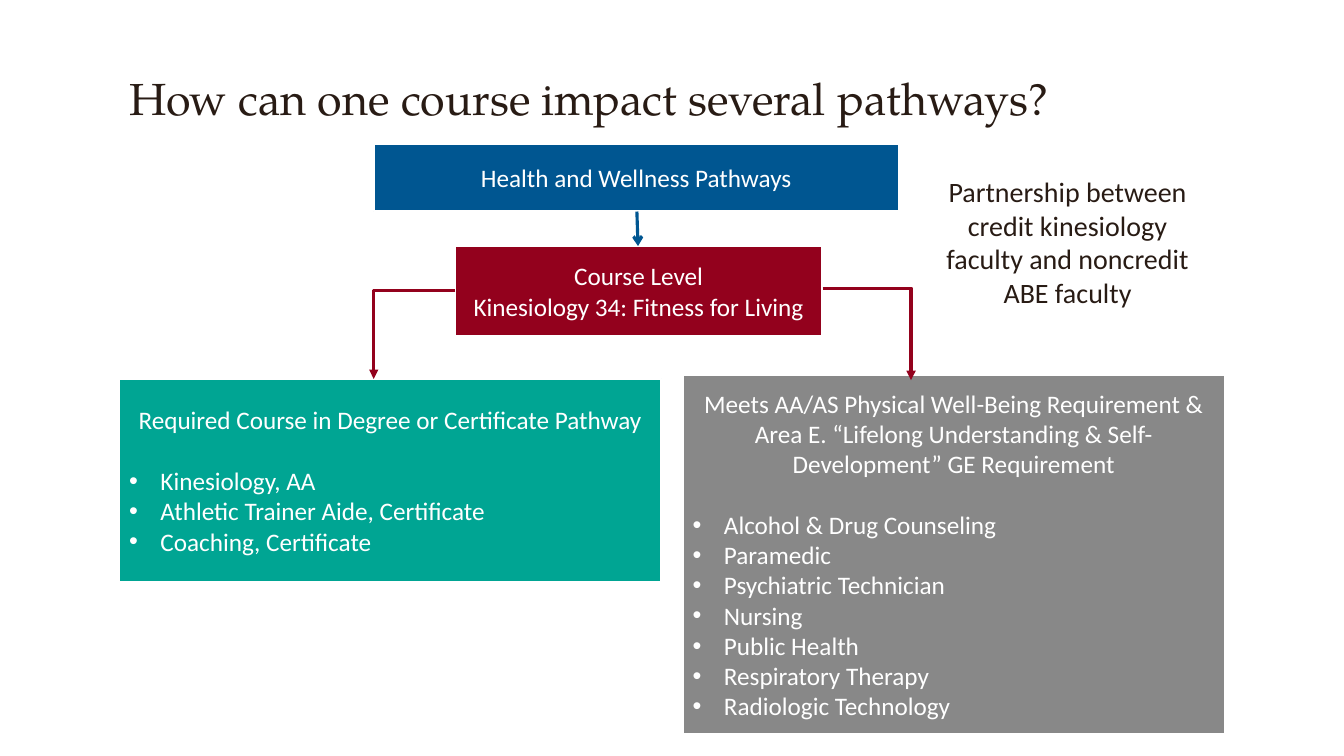
import dataclasses
import typing

import lxml.etree
import pptx
import pptx.dml.color
import pptx.enum.shapes
import pptx.enum.text
import pptx.oxml.ns
import pptx.util

Cm = pptx.util.Cm
Pt = pptx.util.Pt
qn = pptx.oxml.ns.qn
ALIGN = pptx.enum.text.PP_ALIGN
ANCHOR = pptx.enum.text.MSO_ANCHOR
CONNECTOR = pptx.enum.shapes.MSO_CONNECTOR

BODY_FONT = "Calibri"
TITLE_FONT = "TeX Gyre Pagella"
INK, WHITE = "281B14", "FFFFFF"
BLUE, RED, GREEN, GREY = "005691", "93011D", "00A593", "888888"
LIST_INDENT = Cm(0.79)


@dataclasses.dataclass(frozen=True)
class Frame:
    """Left, top, width and height in centimetres."""
    left: float
    top: float
    width: float
    height: float

    def lengths(self) -> list[int]:
        return [Cm(value) for value in dataclasses.astuple(self)]


@dataclasses.dataclass(frozen=True)
class Card:
    frame: Frame
    fill: str
    headings: tuple[str, ...]
    items: tuple[str, ...] = ()


@dataclasses.dataclass(frozen=True)
class Arrow:
    start: tuple[float, float]
    end: tuple[float, float]
    color: str
    head: str
    bent: bool = False


STEP_CARDS = (
    Card(Frame(11.46, 6.2, 9.27, 2.26), RED,
         ("Course Level", "Kinesiology 34: Fitness for Living")),
    Card(Frame(9.42, 3.63, 13.23, 1.7), BLUE, ("Health and Wellness Pathways",)),
)
LIST_CARDS = (
    Card(Frame(3, 9.55, 13.67, 5.11), GREEN,
         ("Required Course in Degree or Certificate Pathway",),
         ("Kinesiology, AA", "Athletic Trainer Aide, Certificate",
          "Coaching, Certificate")),
    Card(Frame(17.2, 9.45, 13.67, 9.04), GREY,
         ("Meets AA/AS Physical Well-Being Requirement & Area E. "
          "“Lifelong Understanding & Self-Development” GE Requirement",),
         ("Alcohol & Drug Counseling", "Paramedic", "Psychiatric Technician",
          "Nursing", "Public Health", "Respiratory Therapy",
          "Radiologic Technology")),
)
ARROWS = (
    Arrow((16.05, 5.33), (16.08, 6.2), BLUE, "arrow"),
    Arrow((11.48, 7.32), (9.42, 9.55), RED, "triangle", bent=True),
    Arrow((20.73, 7.26), (22.96, 9.58), RED, "triangle", bent=True),
)


def rgb(code: str) -> pptx.dml.color.RGBColor:
    return pptx.dml.color.RGBColor.from_string(code)


def place(shape: typing.Any, frame: Frame) -> None:
    shape.left, shape.top, shape.width, shape.height = frame.lengths()


def format_spans(para: typing.Any, font: str, size: float, color: str) -> None:
    for span in para.runs:
        span.font.name = font
        span.font.size = Pt(size)
        span.font.color.rgb = rgb(color)


def set_bullet(para: typing.Any, shown: bool) -> None:
    properties = para._p.get_or_add_pPr()
    indent = LIST_INDENT if shown else 0
    properties.set("marL", str(indent))
    properties.set("indent", str(-indent))
    if shown:
        lxml.etree.SubElement(properties, qn("a:buFont")).set("typeface", "Arial")
        lxml.etree.SubElement(properties, qn("a:buChar")).set("char", "•")
    else:
        lxml.etree.SubElement(properties, qn("a:buNone"))


def fill_card(shape: typing.Any, card: Card) -> None:
    """Colour a shape and write its centred headings and bulleted items."""
    place(shape, card.frame)
    shape.fill.solid()
    shape.fill.fore_color.rgb = rgb(card.fill)
    shape.line.color.rgb = rgb(WHITE)
    shape.line.width = Pt(1.5)
    box = shape.text_frame
    box.text = "\n".join(card.headings + card.items)
    box.word_wrap = True
    box.auto_size = pptx.enum.text.MSO_AUTO_SIZE.NONE
    box.vertical_anchor = ANCHOR.MIDDLE
    first_item = len(card.headings)
    for index, para in enumerate(box.paragraphs):
        listed = index >= first_item
        set_bullet(para, listed)
        para.alignment = ALIGN.LEFT if listed else ALIGN.CENTER
        para.space_before = Pt(22 if index == first_item else 0)
        format_spans(para, BODY_FONT, 18, WHITE)


def add_arrow(page: typing.Any, arrow: Arrow) -> None:
    kind = CONNECTOR.ELBOW if arrow.bent else CONNECTOR.STRAIGHT
    ends = [Cm(value) for value in arrow.start + arrow.end]
    connector = page.shapes.add_connector(kind, *ends)
    connector.line.color.rgb = rgb(arrow.color)
    connector.line.width = Pt(2.25)
    properties = connector.element.spPr
    if arrow.bent:
        properties.find(qn("a:prstGeom")).set("prst", "bentConnector2")
    line = properties.find(qn("a:ln"))
    lxml.etree.SubElement(line, qn("a:tailEnd")).set("type", arrow.head)
    lxml.etree.SubElement(properties, qn("a:effectLst"))


def write_title(title: typing.Any) -> None:
    place(title, Frame(3, 1.02, 27.94, 2.26))
    box = title.text_frame
    box.text = "How can one course impact several pathways?"
    box.auto_size = pptx.enum.text.MSO_AUTO_SIZE.NONE
    box.vertical_anchor = ANCHOR.BOTTOM
    para = box.paragraphs[0]
    para.alignment = ALIGN.LEFT
    para.line_spacing = 0.9
    format_spans(para, TITLE_FONT, 32, INK)


def add_partnership_note(page: typing.Any) -> None:
    note = page.shapes.add_textbox(*Frame(23.44, 4.27, 6.93, 3.68).lengths())
    box = note.text_frame
    box.word_wrap = True
    box.text = ("Partnership between credit kinesiology faculty "
                "and noncredit ABE faculty")
    para = box.paragraphs[0]
    para.alignment = ALIGN.CENTER
    format_spans(para, BODY_FONT, 20, INK)


def main() -> None:
    deck = pptx.Presentation()
    deck.slide_width, deck.slide_height = Cm(33.87), Cm(19.05)
    page = deck.slides.add_slide(deck.slide_layouts.get_by_name("Two Content"))
    write_title(page.shapes.title)
    for index, card in enumerate(LIST_CARDS, start=1):
        fill_card(page.placeholders[index], card)
    for card in STEP_CARDS:
        shape = page.shapes.add_shape(
            pptx.enum.shapes.MSO_SHAPE.RECTANGLE, *card.frame.lengths())
        shape.shadow.inherit = False
        fill_card(shape, card)
    for arrow in ARROWS:
        add_arrow(page, arrow)
    add_partnership_note(page)
    deck.save("out.pptx")


if __name__ == "__main__":
    main()
